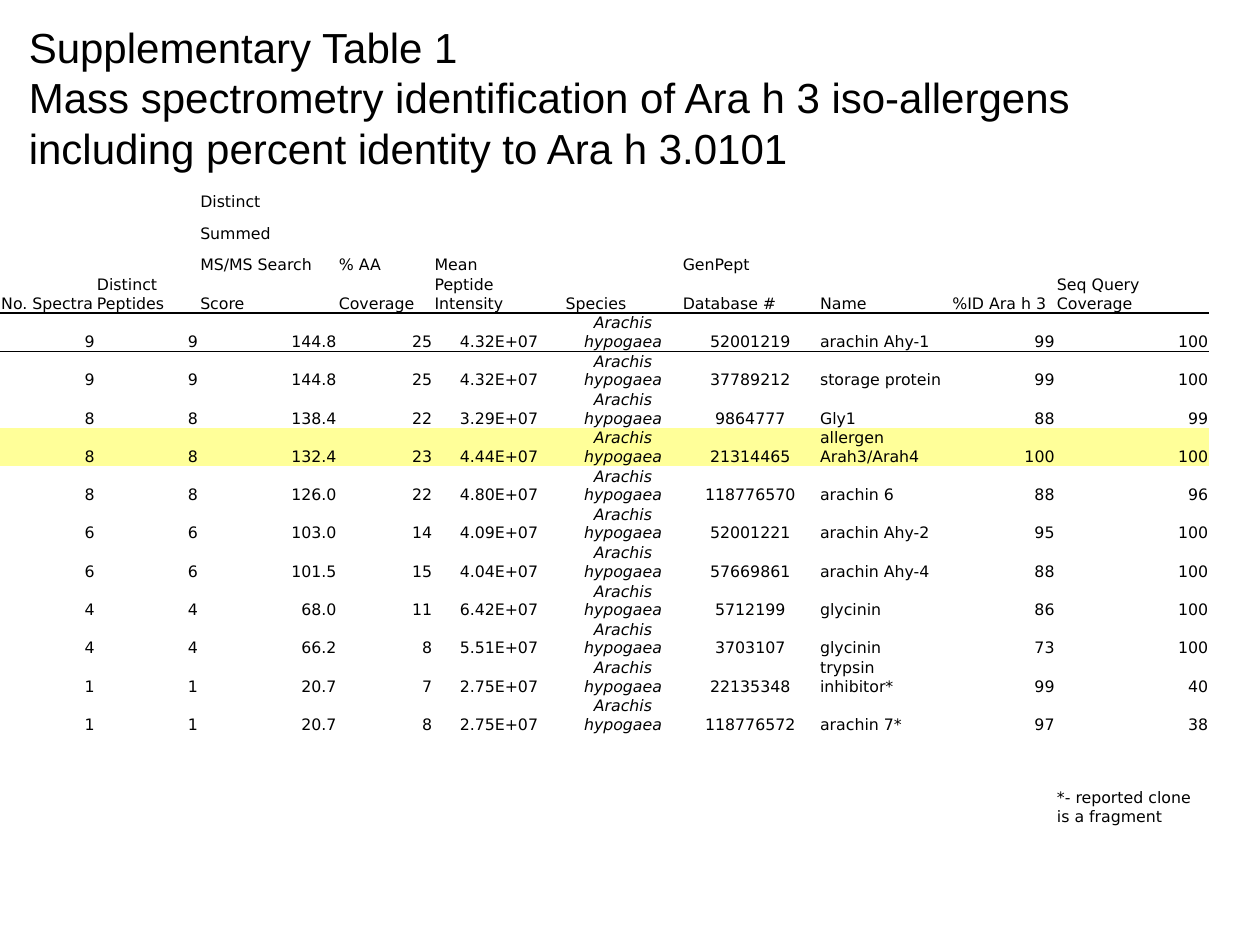
from lxml import etree
from pptx import Presentation
from pptx.dml.color import RGBColor
from pptx.enum import text
from pptx.oxml import ns
from pptx.util import Inches, Pt

BLACK = RGBColor(0x00, 0x00, 0x00)
HIGHLIGHT = RGBColor(0xFF, 0xFF, 0x99)
NO_GRID_STYLE = "{2D5ABB26-0587-4C30-8999-92F81FD0307C}"
LEFT, CENTER, RIGHT = text.PP_ALIGN.LEFT, text.PP_ALIGN.CENTER, text.PP_ALIGN.RIGHT

TITLE = [
    "Supplementary Table 1",
    "Mass spectrometry identification of Ara h 3 iso-allergens "
    "including percent identity to Ara h 3.0101",
]
COLUMN_WIDTHS = [0.76, 0.82, 1.1, 0.76, 1.04, 0.93, 1.09, 1.05, 0.83, 1.22]
ROW_HEIGHT, FOOTNOTE_HEIGHT = 0.25, 0.48
ALIGNMENTS = [RIGHT] * 4 + [CENTER] * 3 + [LEFT] + [RIGHT] * 2
SPECIES = "Arachis hypogaea"
HEADERS = [
    ["", "", "Distinct"] + [""] * 7,
    ["", "", "Summed"] + [""] * 7,
    ["", "", "MS/MS Search", "% AA", "Mean", "", "GenPept", "", "", ""],
    ["No. Spectra", "Distinct Peptides", "Score", "Coverage", "Peptide Intensity",
     "Species", "Database #", "Name", "%ID Ara h 3", "Seq Query Coverage"],
]
# spectra, peptides, score, AA coverage, intensity, database #, name, identity, query coverage
PROTEINS = [
    ("9", "9", "144.8", "25", "4.32E+07", "52001219", "arachin Ahy-1", "99", "100"),
    ("9", "9", "144.8", "25", "4.32E+07", "37789212", "storage protein", "99", "100"),
    ("8", "8", "138.4", "22", "3.29E+07", "9864777", "Gly1", "88", "99"),
    ("8", "8", "132.4", "23", "4.44E+07", "21314465", "allergen Arah3/Arah4", "100", "100"),
    ("8", "8", "126.0", "22", "4.80E+07", "118776570", "arachin 6", "88", "96"),
    ("6", "6", "103.0", "14", "4.09E+07", "52001221", "arachin Ahy-2", "95", "100"),
    ("6", "6", "101.5", "15", "4.04E+07", "57669861", "arachin Ahy-4", "88", "100"),
    ("4", "4", "68.0", "11", "6.42E+07", "5712199", "glycinin", "86", "100"),
    ("4", "4", "66.2", "8", "5.51E+07", "3703107", "glycinin", "73", "100"),
    ("1", "1", "20.7", "7", "2.75E+07", "22135348", "trypsin inhibitor*", "99", "40"),
    ("1", "1", "20.7", "8", "2.75E+07", "118776572", "arachin 7*", "97", "38"),
]
REFERENCE_PROTEIN = 3
FOOTNOTES = [[""] * 10, [""] * 9 + ["*- reported clone is a fragment"]]


def write(paragraph, content, font="DejaVu Sans", size=9, align=LEFT, italic=False):
    """Fill a paragraph; an empty one only keeps its size, so its row stays low."""
    if not content:
        end = etree.SubElement(paragraph._p, ns.qn("a:endParaRPr"))
        end.set("sz", str(size * 100))
        return
    paragraph.alignment = align
    run = paragraph.add_run()
    run.text = content
    run.font.name = font
    run.font.size = Pt(size)
    run.font.italic = italic
    run.font.color.rgb = BLACK


def add_border(cell, side):
    """Rule one side of a cell: lnT for the top, lnB for the bottom."""
    line = etree.Element(ns.qn(f"a:{side}"), w=str(Pt(1)))
    fill = etree.SubElement(line, ns.qn("a:solidFill"))
    etree.SubElement(fill, ns.qn("a:srgbClr"), val=str(BLACK))
    cell._tc.get_or_add_tcPr().insert(0, line)


def format_cell(cell, fill=None):
    cell.margin_left = cell.margin_top = cell.margin_right = Inches(0.01)
    cell.margin_bottom = 0
    cell.vertical_anchor = text.MSO_ANCHOR.BOTTOM
    if fill is None:
        cell.fill.background()
    else:
        cell.fill.solid()
        cell.fill.fore_color.rgb = fill


def add_title(slide, left, top, width, height):
    box = slide.shapes.add_textbox(Inches(left), Inches(top), Inches(width), Inches(height))
    frame = box.text_frame
    frame.word_wrap = True
    for index, line in enumerate(TITLE):
        paragraph = frame.add_paragraph() if index else frame.paragraphs[0]
        write(paragraph, line, font="Arial", size=24)


def add_protein_table(slide, left, top):
    proteins = [[*values[:5], SPECIES, *values[5:]] for values in PROTEINS]
    rows = HEADERS + proteins + FOOTNOTES
    first = len(HEADERS)
    body = range(first, first + len(proteins))
    heights = [ROW_HEIGHT] * (len(rows) - 1) + [FOOTNOTE_HEIGHT]

    table = slide.shapes.add_table(
        len(rows), len(COLUMN_WIDTHS), Inches(left), Inches(top),
        Inches(sum(COLUMN_WIDTHS)), Inches(sum(heights))).table
    table.first_row = table.horz_banding = False
    table._tbl.tblPr.find(ns.qn("a:tableStyleId")).text = NO_GRID_STYLE
    for column, width in zip(table.columns, COLUMN_WIDTHS):
        column.width = Inches(width)
    for row, height in zip(table.rows, heights):
        row.height = Inches(height)

    for r, values in enumerate(rows):
        for c, value in enumerate(values):
            cell = table.cell(r, c)
            format_cell(cell, HIGHLIGHT if r == first + REFERENCE_PROTEIN else None)
            write(cell.text_frame.paragraphs[0], value,
                  align=ALIGNMENTS[c] if r in body else LEFT, italic=value == SPECIES)
            if r == first - 1:
                add_border(cell, "lnB")
            elif r == first:
                add_border(cell, "lnT")


def main():
    presentation = Presentation()
    presentation.slide_width, presentation.slide_height = Inches(10), Inches(7.5)
    slide = presentation.slides.add_slide(presentation.slide_layouts[6])
    add_protein_table(slide, 0, 1.43)
    add_title(slide, 0.13, 0.12, 8.79, 1.31)
    presentation.save("out.pptx")


if __name__ == "__main__":
    main()
